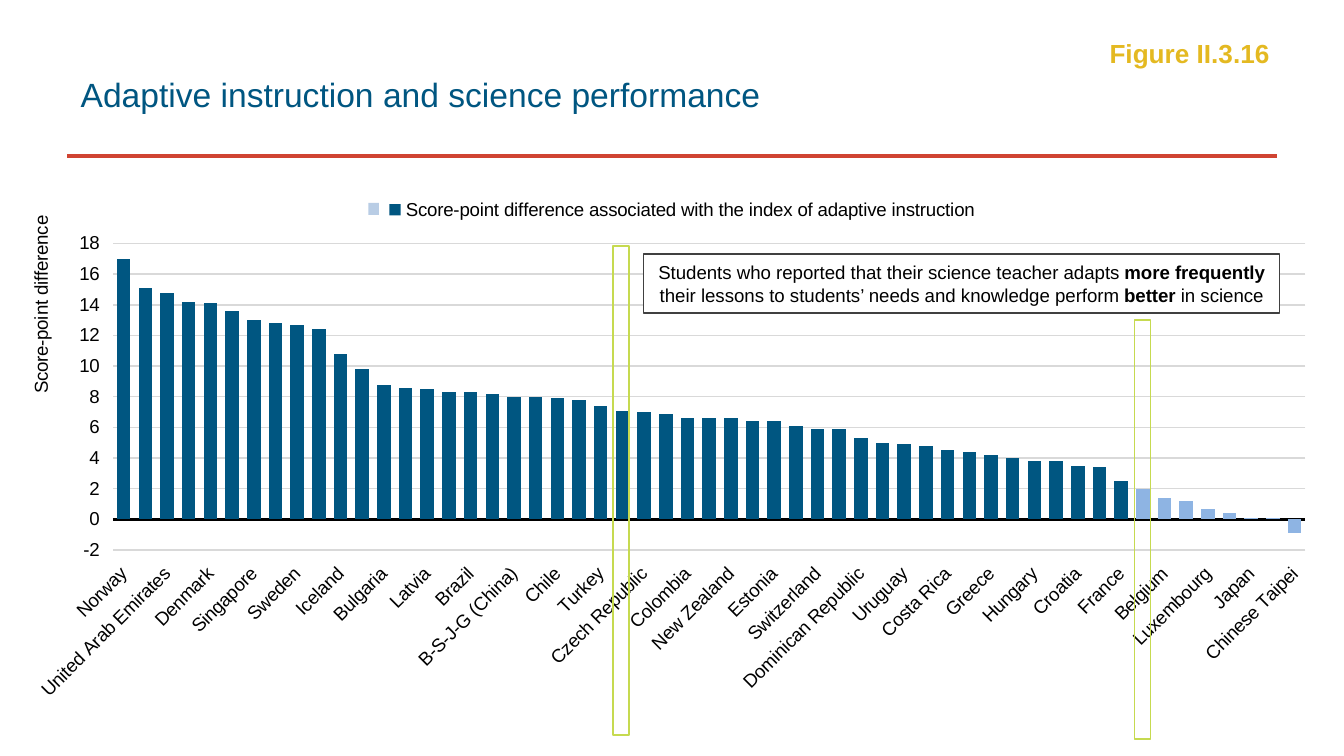
from typing import NamedTuple

from lxml import etree
from pptx import Presentation
from pptx.chart.data import CategoryChartData
from pptx.dml.color import RGBColor
from pptx.enum.chart import (XL_CHART_TYPE, XL_LEGEND_POSITION,
                             XL_TICK_LABEL_POSITION, XL_TICK_MARK)
from pptx.enum.shapes import MSO_CONNECTOR, MSO_SHAPE
from pptx.enum.text import MSO_ANCHOR, PP_ALIGN
from pptx.oxml import parse_xml
from pptx.oxml.ns import nsdecls, qn
from pptx.util import Inches, Pt

COLUMN = XL_CHART_TYPE.COLUMN_CLUSTERED
TOP = XL_LEGEND_POSITION.TOP
LOW = XL_TICK_LABEL_POSITION.LOW
NONE, OUT = XL_TICK_MARK.NONE, XL_TICK_MARK.OUTSIDE
RECT, LINE = MSO_SHAPE.RECTANGLE, MSO_CONNECTOR.STRAIGHT
MIDDLE = MSO_ANCHOR.MIDDLE
CENTER, LEFT, RIGHT = PP_ALIGN.CENTER, PP_ALIGN.LEFT, PP_ALIGN.RIGHT

BLACK = RGBColor(0x00, 0x00, 0x00)
WHITE = RGBColor(0xFF, 0xFF, 0xFF)
NAVY = RGBColor(0x00, 0x56, 0x81)
SKY = RGBColor(0x8E, 0xB4, 0xE3)
PALE = RGBColor(0xB9, 0xCD, 0xE5)
RED = RGBColor(0xD0, 0x44, 0x32)
GOLD = RGBColor(0xE4, 0xB9, 0x21)
LIME = RGBColor(0xC6, 0xDA, 0x50)
DARK = RGBColor(0x40, 0x40, 0x40)
GRID = RGBColor(0xD9, 0xD9, 0xD9)
FACE = "Arial"

NAMES = [
    "Norway", "Netherlands", "United Arab Emirates", "Qatar", "Denmark",
    "Finland", "Singapore", "Australia", "Sweden", "United Kingdom",
    "Iceland", "Germany", "Bulgaria", "Portugal", "Latvia", "Israel",
    "Brazil", "Russia", "B-S-J-G (China)", "Hong Kong (China)", "Chile",
    "Canada", "Turkey", "OECD average", "Czech Republic", "Ireland",
    "Colombia", "Poland", "New Zealand", "Macao (China)", "Estonia",
    "Lithuania", "Switzerland", "Thailand", "Dominican Republic",
    "Slovak Republic", "Uruguay", "United States", "Costa Rica", "Korea",
    "Greece", "Montenegro", "Hungary", "Mexico", "Croatia", "Italy",
    "France", "Spain", "Belgium", "Tunisia", "Luxembourg", "Peru", "Japan",
    "Austria", "Chinese Taipei"]
STRONG = [
    17, 15.1, 14.8, 14.2, 14.1, 13.6, 13, 12.8, 12.7, 12.4, 10.8, 9.8, 8.8,
    8.6, 8.5, 8.3, 8.3, 8.2, 8, 8, 7.9, 7.8, 7.4, 7.1, 7, 6.9, 6.6, 6.6,
    6.6, 6.4, 6.4, 6.1, 5.9, 5.9, 5.3, 5, 4.9, 4.8, 4.5, 4.4, 4.2, 4, 3.8,
    3.8, 3.5, 3.4, 2.5]
WEAK = [2, 1.4, 1.2, 0.7, 0.4, 0.1, 0.1, -0.9]


class Box(NamedTuple):
    left: float
    top: float
    width: float
    height: float
    fill: RGBColor | None = None
    line: RGBColor | None = None


NOTE = Box(4.79, 1.89, 4.73, 0.44, WHITE, DARK)
KEY = Box(2.74, 1.51, 0.08, 0.09, PALE)
MARKS = [Box(4.56, 1.83, 0.12, 3.64, line=LIME),
         Box(8.44, 2.38, 0.12, 3.12, line=LIME)]
WORDS = [("Students who reported that their science teacher adapts ", False),
         ("more frequently", True),
         (" their lessons to students’ needs and knowledge perform ", False),
         ("better ", True), ("in science", False)]


def style(font, size: float, color: RGBColor, bold: bool = False) -> None:
    font.name, font.size, font.bold = FACE, Pt(size), bold
    font.color.rgb = color


def add_box(slide, box: Box):
    shape = slide.shapes.add_shape(RECT, *map(Inches, box[:4]))
    shape.shadow.inherit = False
    if box.fill is None:
        shape.fill.background()
    else:
        shape.fill.solid()
        shape.fill.fore_color.rgb = box.fill
    if box.line is None:
        shape.line.fill.background()
    else:
        shape.line.color.rgb = box.line
        shape.line.width = Pt(0.75)
    return shape


def add_rule(slide) -> None:
    """Red line under the title."""
    ends = map(Inches, (0.5, 1.16, 9.5, 1.16))
    rule = slide.shapes.add_connector(LINE, *ends)
    rule.line.color.rgb = RED
    rule.line.width = Pt(2)
    etree.SubElement(rule._element.spPr, qn("a:effectLst"))


def layout(**parts: float | str):
    """Manual layout; parts come in schema order."""
    tags = "".join(f'<c:{k} val="{v}"/>' for k, v in parts.items())
    return parse_xml(f'<c:layout {nsdecls("c")}><c:manualLayout>{tags}'
                     '</c:manualLayout></c:layout>')


def set_axes(chart) -> None:
    cat, val = chart.category_axis, chart.value_axis
    for axis, tick in ((cat, NONE), (val, OUT)):
        axis.tick_label_position = LOW
        axis.major_tick_mark, axis.minor_tick_mark = tick, NONE
        style(axis.tick_labels.font, 10, BLACK)
    cat.format.line.color.rgb = BLACK
    cat.format.line.width = Pt(1.25)
    cat._element.find(qn("c:txPr")).find(qn("a:bodyPr")).set("rot", "-2700000")
    skip = parse_xml(f'<c:tickLblSkip {nsdecls("c")} val="2"/>')
    cat._element.find(qn("c:noMultiLvlLbl")).addprevious(skip)

    val.minimum_scale, val.maximum_scale, val.major_unit = -2, 18, 2
    val.tick_labels.number_format = "0"
    val.tick_labels.number_format_is_linked = False
    val.format.line.fill.background()
    val.major_gridlines.format.line.color.rgb = GRID
    val.major_gridlines.format.line.width = Pt(0.75)
    frame = val.axis_title.text_frame
    frame.text = "Score-point difference"
    style(frame.paragraphs[0].runs[0].font, 10, BLACK)
    frame._txBody.find(qn("a:bodyPr")).set("rot", "-5400000")
    title = val.axis_title._element
    for old in title.findall(qn("c:layout")):
        title.remove(old)
    title.find(qn("c:tx")).addnext(
        layout(xMode="edge", yMode="edge", x=0.004, y=0.05))


def add_chart(slide) -> None:
    data = CategoryChartData()
    data.categories = NAMES
    data.add_series("Score-point difference associated with the index of "
                    "adaptive instruction",
                    STRONG + [None] * len(WEAK))
    data.add_series("Series 2", [None] * len(STRONG) + WEAK)
    place = map(Inches, (0.15, 1.37, 9.85, 4.21))
    chart = slide.shapes.add_chart(COLUMN, *place, data).chart
    style(chart.font, 10, BLACK)
    chart.has_title = False
    plot = chart.plots[0]
    plot.gap_width, plot.overlap = 60, 100
    plot.vary_by_categories = False
    for series, color in zip(plot.series, (NAVY, SKY)):
        series.invert_if_negative = False
        series.format.fill.solid()
        series.format.fill.fore_color.rgb = color
    set_axes(chart)

    chart.has_legend = True
    legend = chart.legend
    legend.position, legend.include_in_layout = TOP, False
    style(legend.font, 10, BLACK)
    hide = parse_xml(f'<c:legendEntry {nsdecls("c")}><c:idx val="1"/>'
                     '<c:delete val="1"/></c:legendEntry>')
    legend._element.find(qn("c:legendPos")).addnext(hide)

    area = chart._chartSpace.chart.plotArea
    for old in area.findall(qn("c:layout")):
        area.remove(old)
    area.insert(0, layout(layoutTarget="inner", xMode="edge", yMode="edge",
                          x=0.07, y=0.105, w=0.901, h=0.542))


def add_heads(slide) -> None:
    title = slide.shapes.title
    title.left, title.top = Inches(0.5), Inches(0.23)
    title.width, title.height = Inches(7.99), Inches(0.94)
    title.text_frame.text = "Adaptive instruction and science performance"
    title.text_frame.vertical_anchor = MIDDLE
    para = title.text_frame.paragraphs[0]
    para.alignment = LEFT
    style(para.runs[0].font, 18, NAVY)

    place = map(Inches, (7.95, 0.23, 1.65, 0.34))
    frame = slide.shapes.add_textbox(*place).text_frame
    frame.word_wrap = True
    frame.text = "Figure II.3.16 "
    para = frame.paragraphs[0]
    para.alignment = RIGHT
    style(para.runs[0].font, 14, GOLD, True)


def add_note(slide) -> None:
    frame = add_box(slide, NOTE).text_frame
    frame.word_wrap, frame.vertical_anchor = True, MIDDLE
    para = frame.paragraphs[0]
    para.alignment = CENTER
    for text, bold in WORDS:
        run = para.add_run()
        run.text = text
        style(run.font, 10, BLACK, bold)


def main() -> None:
    deck = Presentation()
    deck.slide_width = Inches(10)
    deck.slide_height = deck.slide_width * 9 // 16
    slide = deck.slides.add_slide(deck.slide_layouts[5])
    add_rule(slide)
    add_chart(slide)
    add_heads(slide)
    add_note(slide)
    for box in (KEY, *MARKS):
        add_box(slide, box)
    deck.save("out.pptx")


if __name__ == "__main__":
    main()
